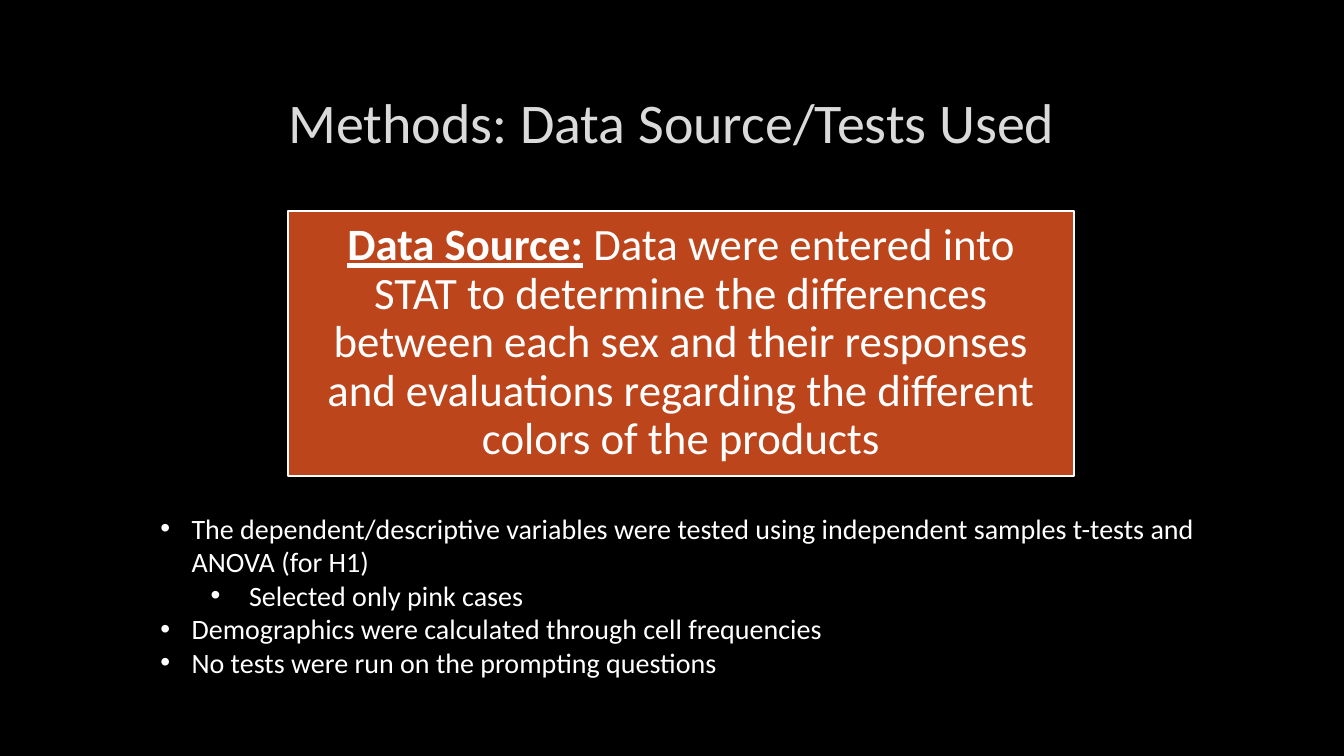
from pptx import Presentation
from pptx.dml.color import RGBColor
from pptx.enum.shapes import MSO_SHAPE
from pptx.enum.text import MSO_ANCHOR, MSO_AUTO_SIZE, PP_ALIGN
from pptx.util import Inches, Pt
from lxml import etree

RECT = MSO_SHAPE.RECTANGLE
MIDDLE, TOP = MSO_ANCHOR.MIDDLE, MSO_ANCHOR.TOP
CENTER, LEFT = PP_ALIGN.CENTER, PP_ALIGN.LEFT
FIXED = MSO_AUTO_SIZE.NONE
NS = "http://schemas.openxmlformats.org/drawingml/2006/main"

# Content
TITLE = "Methods: Data Source/Tests Used"
SOURCE = [
    ("Data Source:", True),
    (" Data were entered into STAT to determine the differences between each sex "
     "and their responses and evaluations regarding the different colors of the "
     "products", False),
]
TESTS = [
    (0, "The dependent/descriptive variables were tested using independent "
        "samples t-tests and\vANOVA (for H1)"),
    (1, "Selected only pink cases"),
    (0, "Demographics were calculated through cell frequencies"),
    (0, "No tests were run on the prompting questions"),
]

# Format values
COLORS = {"back": "000000", "title": "DADADA", "panel": "BC451B", "text": "FFFFFF"}
PLACES = {
    "title": (1, 0.67, 11.32, 1.06),
    "panel": (2.86, 2.09, 7.79, 2.63),
    "tests": (1.49, 5.02, 11.11, 1.78),
}
INDENTS = [(0.31, -0.31), (0.88, -0.38)]  # left margin, hanging indent
MARGINS = ("margin_left", "margin_top", "margin_right", "margin_bottom")


def color(name):
    return RGBColor.from_string(COLORS[name])


def apply(item, values):
    for key, value in values.items():
        setattr(item, key, value)


def place(shape, name):
    keys = ("left", "top", "width", "height")
    apply(shape, dict(zip(keys, map(Inches, PLACES[name]))))


def style(font, size, tone, **extra):
    apply(font, {"name": "Calibri", "size": Pt(size), **extra})
    font.color.rgb = color(tone)


def frame(shape, anchor):
    text = shape.text_frame
    apply(text, {"word_wrap": True, "auto_size": FIXED, "vertical_anchor": anchor})
    return text


def bullet(para, level):
    margin, hang = INDENTS[level]
    props = para._p.get_or_add_pPr()
    props.set("marL", str(Inches(margin)))
    props.set("indent", str(Inches(hang)))
    etree.SubElement(props, f"{{{NS}}}buFont").set("typeface", "Arial")
    etree.SubElement(props, f"{{{NS}}}buChar").set("char", "•")


# Slide
deck = Presentation()
deck.slide_width, deck.slide_height = Inches(13.33), Inches(7.5)
slide = deck.slides.add_slide(deck.slide_layouts[1])
slide.background.fill.solid()
slide.background.fill.fore_color.rgb = color("back")

# Title
title = slide.shapes.title
place(title, "title")
text = frame(title, MIDDLE)
text.text = TITLE
text.paragraphs[0].alignment = CENTER
style(text.paragraphs[0].runs[0].font, 40, "title")

# Data source panel
panel = slide.shapes.add_shape(RECT, *map(Inches, PLACES["panel"]))
panel.shadow.inherit = False
panel.fill.solid()
panel.fill.fore_color.rgb = color("panel")
panel.line.color.rgb = color("text")
panel.line.width = Pt(1.25)
text = frame(panel, MIDDLE)
apply(text, dict.fromkeys(MARGINS, Inches(0.13)))
para = text.paragraphs[0]
apply(para, {"alignment": CENTER, "line_spacing": 0.9})
for words, strong in SOURCE:
    run = para.add_run()
    run.text = words
    style(run.font, 32, "text", bold=strong, underline=strong)

# List of tests
body = slide.placeholders[1]
place(body, "tests")
text = frame(body, TOP)
for i, (level, words) in enumerate(TESTS):
    para = text.add_paragraph() if i else text.paragraphs[0]
    para.text = words
    apply(para, {"level": level, "alignment": LEFT, "line_spacing": 1.0,
                 "space_before": Pt(0), "space_after": Pt(0)})
    bullet(para, level)
    for run in para.runs:
        style(run.font, 20, "text")

deck.save("out.pptx")
